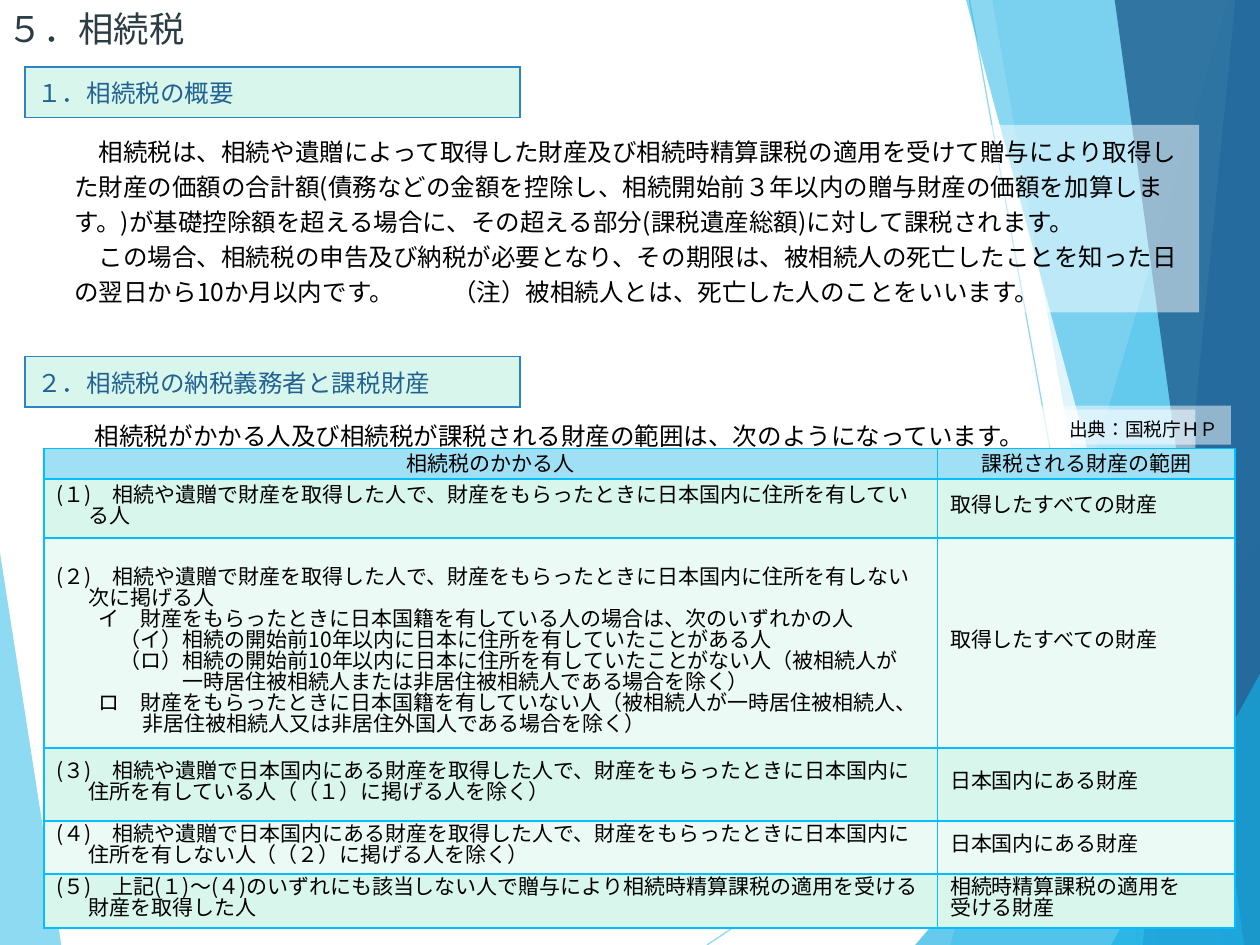
from lxml import etree
from pptx import Presentation
from pptx.dml.color import RGBColor
from pptx.enum.lang import MSO_LANGUAGE_ID as Lang
from pptx.enum.shapes import MSO_CONNECTOR as Connector, MSO_SHAPE as Shape
from pptx.enum.text import MSO_ANCHOR as Anchor, MSO_AUTO_SIZE as AutoSize, PP_ALIGN as Align
from pptx.oxml.ns import qn
from pptx.util import Pt

FONT = "Noto Sans CJK JP"
BLACK = RGBColor(0x00, 0x00, 0x00)
WHITE = RGBColor(0xFF, 0xFF, 0xFF)
SLATE = RGBColor(0x2C, 0x3C, 0x43)
SKY = RGBColor(0x5F, 0xCB, 0xEF)
CYAN = RGBColor(0x17, 0xB0, 0xE4)
BLUE = RGBColor(0x2E, 0x83, 0xC3)
NAVY = RGBColor(0x22, 0x62, 0x92)
BORDER = RGBColor(0x05, 0xBE, 0xFF)
HEADER = RGBColor(0x9F, 0xE0, 0xF5)
MINT = RGBColor(0xD9, 0xF6, 0xEC)
PALE = RGBColor(0xEC, 0xFA, 0xF5)


def write(frame, paras, size=12, color=BLACK, align=Align.LEFT, spacing=None, tab=None):
    """Each paragraph is (text, left margin, first-line indent)."""
    frame.word_wrap = True
    for number, (text, left, first) in enumerate(paras):
        para = frame.add_paragraph() if number else frame.paragraphs[0]
        para.alignment = align
        if spacing:
            para.line_spacing = Pt(spacing)
        props = para._p.get_or_add_pPr()
        props.set("marL", str(Pt(left)))
        props.set("indent", str(Pt(first)))
        if tab and "\t" in text:
            stops = etree.SubElement(props, qn("a:tabLst"))
            etree.SubElement(stops, qn("a:tab"), pos=str(Pt(tab)), algn="l")
        span = para.add_run()
        span.text = text
        span.font.size = Pt(size)
        span.font.name = FONT
        span.font.color.rgb = color
        span.font.language_id = Lang.JAPANESE
        etree.SubElement(span.font._element, qn("a:ea"), typeface=FONT)


def fade(shape, opacity):
    for color in shape._element.spPr.iter(qn("a:srgbClr")):
        etree.SubElement(color, qn("a:alpha"), val=str(opacity * 1000))


deck = Presentation()
deck.slide_width, deck.slide_height = Pt(720), Pt(540)
page = deck.slides.add_slide(deck.slide_layouts[5])

# Background lines and facets
for x1, y1, x2, y2 in [(404, 540, 720, 329), (554, 0, 651, 540)]:
    line = page.shapes.add_connector(Connector.STRAIGHT, Pt(x1), Pt(y1), Pt(x2), Pt(y2))
    line.line.color.rgb = SKY
    line.line.width = Pt(0.75)
    fade(line, 70)
    etree.SubElement(line._element.spPr, qn("a:effectLst"))

facets = [
    (SKY, 70, [(0, 316), (35, 540), (0, 540)]),
    (SKY, 36, [(702, 0), (543, 540), (720, 540), (720, 0)]),
    (SKY, 20, [(567, 0), (662, 540), (720, 540), (720, 0)]),
    (CYAN, 66, [(523, 540), (720, 309), (720, 540)]),
    (CYAN, 50, [(552, 0), (698, 540), (720, 540), (720, 0)]),
    (BLUE, 70, [(706, 0), (653, 540), (720, 540), (720, 0)]),
    (NAVY, 82, [(637, 0), (711, 540), (720, 540), (720, 0)]),
    (CYAN, 66, [(635, 540), (720, 385), (720, 540)]),
]
for color, opacity, corners in facets:
    points = [(Pt(x), Pt(y)) for x, y in corners]
    builder = page.shapes.build_freeform(*points[0])
    builder.add_line_segments(points[1:], close=True)
    facet = builder.convert_to_shape()
    facet.shadow.inherit = False
    facet.fill.solid()
    facet.fill.fore_color.rgb = color
    facet.line.fill.background()
    fade(facet, opacity)

# Title
title = page.shapes.title
title.left, title.top, title.width, title.height = Pt(0), Pt(0), Pt(288), Pt(32.4)
frame = title.text_frame
frame.auto_size = AutoSize.NONE
frame.vertical_anchor = Anchor.MIDDLE
frame.margin_top = frame.margin_right = frame.margin_bottom = 0
frame.margin_left = Pt(4.5)
write(frame, [("５．相続税", 0, 0)], size=20.2, color=SLATE)

# Text on translucent white boxes
overview = [
    ("相続税は、相続や遺贈によって取得した財産及び相続時精算課税の適用を受けて贈与により取得した財産の価額の合計額"
     "(債務などの金額を控除し、相続開始前３年以内の贈与財産の価額を加算します。)が基礎控除額を超える場合に、"
     "その超える部分(課税遺産総額)に対して課税されます。", 0, 14),
    ("この場合、相続税の申告及び納税が必要となり、その期限は、被相続人の死亡したことを知った日の翌日から10か月以内です。"
     "\t（注）被相続人とは、死亡した人のことをいいます。", 0, 14),
]
scope = [("相続税がかかる人及び相続税が課税される財産の範囲は、次のようになっています。", 0, 14)]
credit = [("出典：国税庁ＨＰ", 0, 0)]
boxes = [
    (35.3, 71.3, 650, 107.3, overview, dict(size=14, spacing=20, tab=273)),
    (33.1, 234, 650, 27.4, scope, dict(size=14, spacing=20)),
    (584.6, 231.8, 118.8, 22.3, credit, dict(size=10.7, spacing=16, align=Align.RIGHT)),
]
for left, top, width, height, paras, style in boxes:
    box = page.shapes.add_shape(Shape.RECTANGLE, Pt(left), Pt(top), Pt(width), Pt(height))
    box.shadow.inherit = False
    box.fill.solid()
    box.fill.fore_color.rgb = WHITE
    box.line.fill.background()
    fade(box, 50)
    box.text_frame.auto_size = AutoSize.SHAPE_TO_FIT_TEXT
    box.text_frame.vertical_anchor = Anchor.TOP
    write(box.text_frame, paras, **style)

# Table contents
everything = [("取得したすべての財産", 0, 0)]
domestic = [("日本国内にある財産", 0, 0)]
taxpayers = [
    [[("相続税のかかる人", 0, 0)], [("課税される財産の範囲", 0, 0)]],
    [[("(１)　相続や遺贈で財産を取得した人で、財産をもらったときに日本国内に住所を有している人", 18, -18)], everything],
    [[("(２)　相続や遺贈で財産を取得した人で、財産をもらったときに日本国内に住所を有しない次に掲げる人", 18, -18),
      ("イ　財産をもらったときに日本国籍を有している人の場合は、次のいずれかの人", 24, 0),
      ("（イ）相続の開始前10年以内に日本に住所を有していたことがある人", 36, 0),
      ("（ロ）相続の開始前10年以内に日本に住所を有していたことがない人（被相続人が", 36, 0),
      ("一時居住被相続人または非居住被相続人である場合を除く）", 72, 0),
      ("ロ　財産をもらったときに日本国籍を有していない人（被相続人が一時居住被相続人、"
       "非居住被相続人又は非居住外国人である場合を除く）", 49, -25)], everything],
    [[("(３)　相続や遺贈で日本国内にある財産を取得した人で、財産をもらったときに日本国内に住所を有している人"
       "（（１）に掲げる人を除く）", 18, -18)], domestic],
    [[("(４)　相続や遺贈で日本国内にある財産を取得した人で、財産をもらったときに日本国内に住所を有しない人"
       "（（２）に掲げる人を除く）", 18, -18)], domestic],
    [[("(５)　上記(１)～(４)のいずれにも該当しない人で贈与により相続時精算課税の適用を受ける財産を取得した人", 18, -18)],
     [("相続時精算課税の適用を", 0, 0), ("受ける財産", 0, 0)]],
]
headings = [[[[(text, 0, 0)]]] for text in ("１．相続税の概要", "２．相続税の納税義務者と課税財産")]

# Heading bars and taxpayer table
tables = [
    (14.2, 38.2, [283], [28.8], headings[0], BLUE),
    (14.2, 203.8, [283], [28.8], headings[1], BLUE),
    (25.2, 256.3, [510.5, 170], [17.3, 33.8, 120, 41.8, 30.2, 31], taxpayers, BORDER),
]
for left, top, widths, heights, rows, edge in tables:
    table = page.shapes.add_table(len(heights), len(widths), Pt(left), Pt(top),
                                  Pt(sum(widths)), Pt(sum(heights))).table
    table.first_row = table.horz_banding = False
    for column, width in zip(table.columns, widths):
        column.width = Pt(width)
    for r, (row, height) in enumerate(zip(rows, heights)):
        table.rows[r].height = Pt(height)
        for c, paras in enumerate(row):
            cell = table.cell(r, c)
            cell.vertical_anchor = Anchor.MIDDLE
            props = cell._tc.get_or_add_tcPr()
            for side in ("lnL", "lnR", "lnT", "lnB"):
                rule = etree.SubElement(props, qn("a:" + side), w=str(Pt(1)))
                paint = etree.SubElement(rule, qn("a:solidFill"))
                etree.SubElement(paint, qn("a:srgbClr"), val=str(edge))
            cell.fill.solid()
            if rows is not taxpayers:
                cell.fill.fore_color.rgb = MINT
                write(cell.text_frame, paras, size=14, color=NAVY)
                continue
            # The long second entry sits one line lower
            cell.margin_top = Pt(12 if len(paras) > 2 else 0)
            cell.margin_bottom = 0
            cell.fill.fore_color.rgb = HEADER if r == 0 else (PALE, MINT)[r % 2]
            write(cell.text_frame, paras, spacing=12 if r else 16,
                  align=Align.LEFT if r else Align.CENTER)

deck.save("out.pptx")
